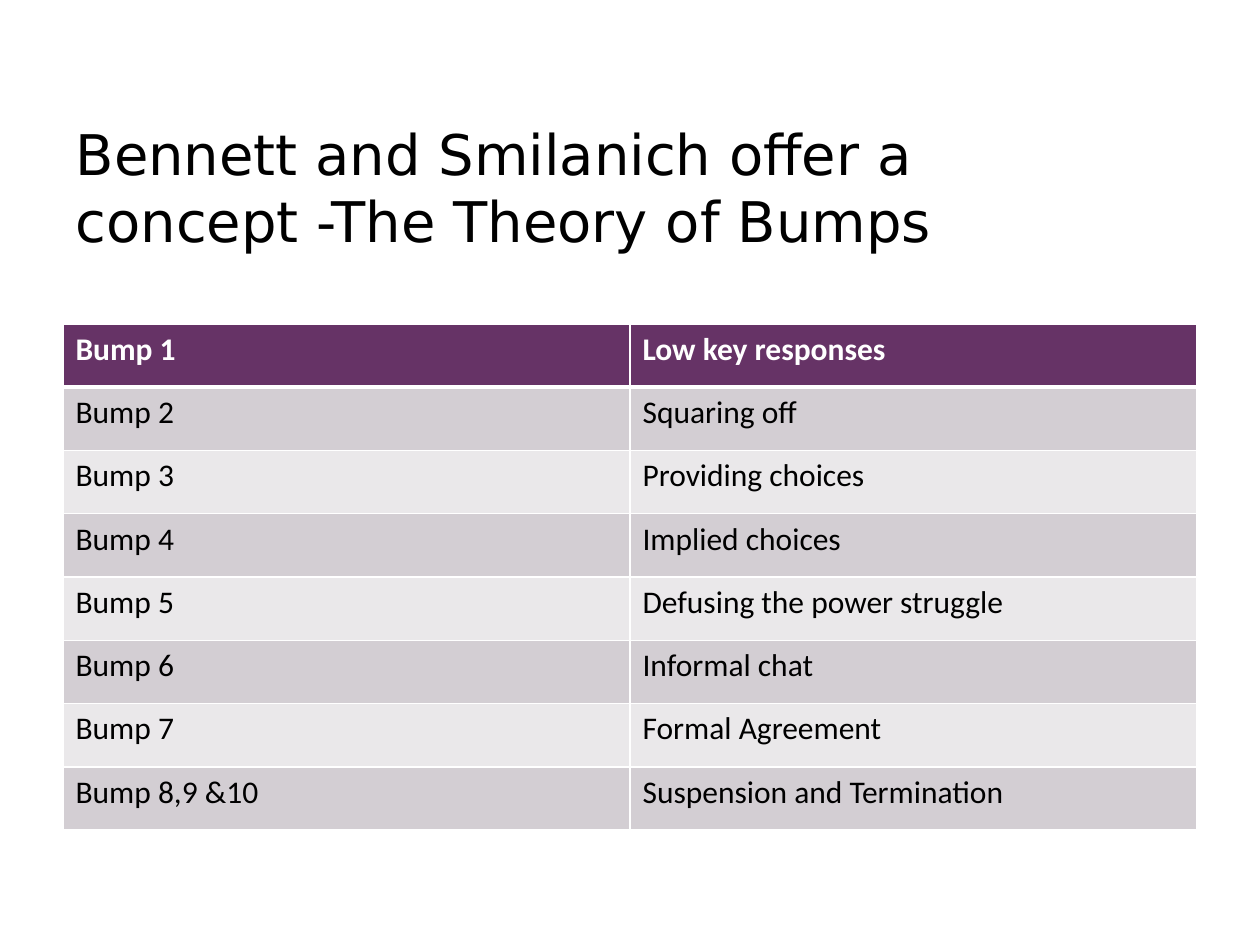
from lxml import etree
from pptx import Presentation
from pptx import util as u
from pptx.dml.color import RGBColor
from pptx.enum import text as t
from pptx.oxml import ns

WHITE = RGBColor(0xFF, 0xFF, 0xFF)
BLACK = RGBColor(0, 0, 0)
PLUM = RGBColor(0x66, 0x33, 0x66)
BANDS = (RGBColor(0xEA, 0xE8, 0xEA), RGBColor(0xD3, 0xCE, 0xD3))

TITLE = "Bennett and Smilanich offer a concept -The Theory of Bumps"
BUMPS = [
    ("Bump 1", "Low key responses"),
    ("Bump 2", "Squaring off"),
    ("Bump 3", "Providing choices"),
    ("Bump 4", "Implied choices"),
    ("Bump 5", "Defusing the power struggle"),
    ("Bump 6", "Informal chat"),
    ("Bump 7", "Formal Agreement"),
    ("Bump 8,9 &10", "Suspension and Termination"),
]


def style(font, name, size, color, bold=False):
    font.name, font.size, font.bold = name, u.Pt(size), bold
    font.color.rgb = color


def add_title(slide, box):
    title = slide.shapes.title
    title.left, title.top, title.width, title.height = box
    frame = title.text_frame
    frame.text = TITLE
    frame.word_wrap = True
    frame.auto_size = t.MSO_AUTO_SIZE.NONE
    frame.vertical_anchor = t.MSO_ANCHOR.MIDDLE
    frame.margin_bottom = u.Inches(1.59)  # keeps the words above the table
    line = frame.paragraphs[0]
    line.alignment = t.PP_ALIGN.LEFT
    style(line.runs[0].font, "DejaVu Sans", 32, BLACK)


def add_rules(cell, head):
    """Draw white cell borders, thicker below the head row."""
    props = cell._tc.get_or_add_tcPr()
    for spot, side in enumerate(("lnL", "lnR", "lnT", "lnB")):
        width = 3 if head and side == "lnB" else 1
        rule = etree.Element(ns.qn(f"a:{side}"), w=str(u.Pt(width)))
        fill = etree.SubElement(rule, ns.qn("a:solidFill"))
        etree.SubElement(fill, ns.qn("a:srgbClr"), val=str(WHITE))
        props.insert(spot, rule)


def add_bumps(slide, box):
    grid = slide.shapes.add_table(len(BUMPS), len(BUMPS[0]), *box).table
    for row, words in enumerate(BUMPS):
        head = row == 0
        for col, word in enumerate(words):
            cell = grid.cell(row, col)
            cell.text = word
            cell.fill.solid()
            cell.fill.fore_color.rgb = PLUM if head else BANDS[row % 2]
            font = cell.text_frame.paragraphs[0].runs[0].font
            style(font, "Calibri", 18, WHITE if head else BLACK, head)
            add_rules(cell, head)


def main():
    deck = Presentation()
    deck.slide_width, deck.slide_height = u.Inches(10), u.Inches(7.5)
    slide = deck.slides.add_slide(deck.slide_layouts[5])
    edge = u.Inches(0.5)
    add_title(slide, (edge, u.Inches(0.36), u.Inches(7.33), u.Inches(3.78)))
    add_bumps(slide, (edge, u.Inches(2.57),
                      deck.slide_width - 2 * edge, u.Inches(4.02)))
    deck.save("out.pptx")


if __name__ == "__main__":
    main()
